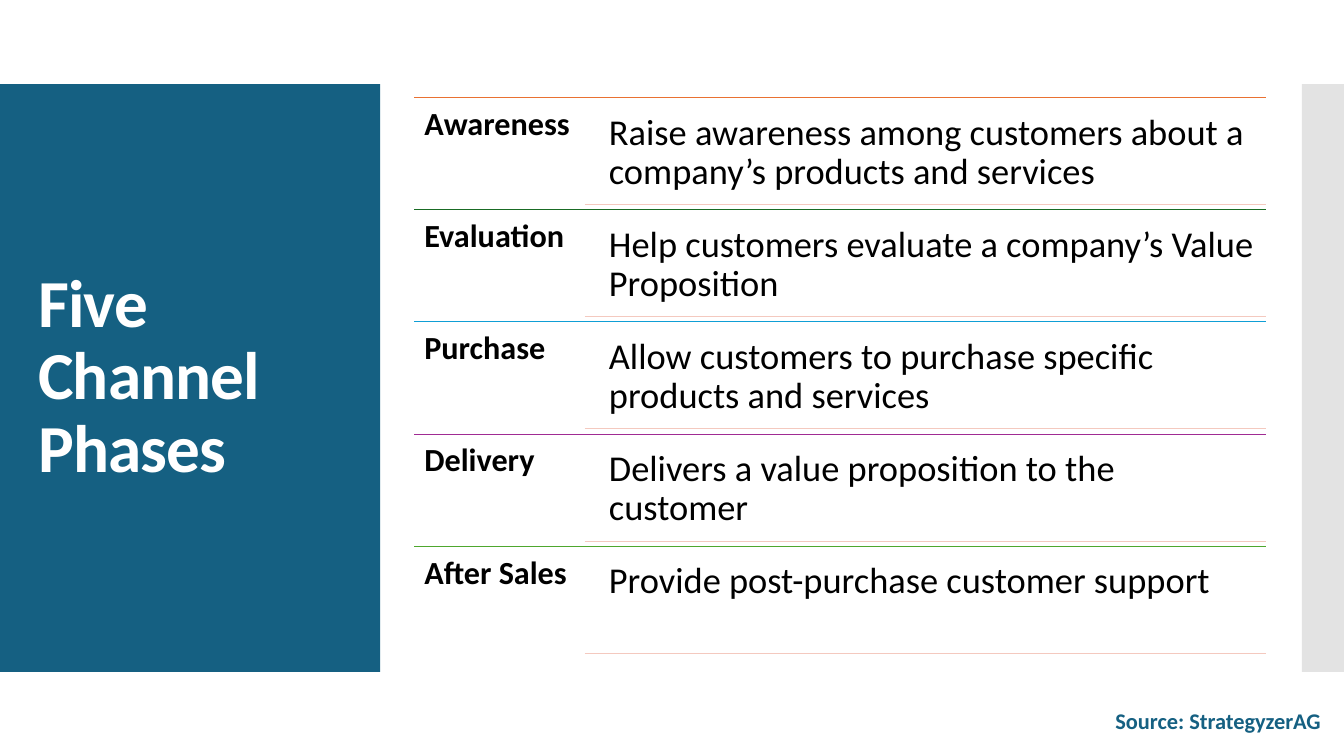
import dataclasses
import pptx
import pptx.dml.color
import pptx.enum.shapes
import pptx.enum.text
import pptx.oxml
import pptx.oxml.ns
import pptx.util

ANCHOR = pptx.enum.text.MSO_ANCHOR
ALIGN = pptx.enum.text.PP_ALIGN
SLIDE_WIDTH, SLIDE_HEIGHT = 13.33, 7.5


@dataclasses.dataclass(frozen=True)
class Theme:
    """Colours, font and type sizes of the slide."""
    font: str = "Calibri"
    panel: str = "156082"
    strip: str = "C8C8C8"
    title: str = "FFFFFF"
    text: str = "000000"
    underline: str = "F4C9BF"
    accents: tuple = ("E97132", "196B24", "0F9ED5", "A02B93", "4EA72E")
    title_size: int = 48
    label_size: int = 23
    detail_size: int = 26
    source_size: int = 16
    line_width: float = 0.75


@dataclasses.dataclass(frozen=True)
class Box:
    """A rectangle in inches."""
    left: float
    top: float
    width: float
    height: float

    def lengths(self):
        """Return left, top, width and height as slide lengths."""
        return [pptx.util.Inches(value) for value in dataclasses.astuple(self)]


THEME = Theme()
PHASES = (
    ("Awareness", "Raise awareness among customers about a company’s products and services"),
    ("Evaluation", "Help customers evaluate a company’s Value Proposition"),
    ("Purchase", "Allow customers to purchase specific products and services"),
    ("Delivery", "Delivers a value proposition to the customer"),
    ("After Sales", "Provide post-purchase customer support"),
)


def rgb(color):
    """Turn a hex string into a colour."""
    return pptx.dml.color.RGBColor.from_string(color)


def add_text(slide, box, text, size, color, bold=False, align=ALIGN.LEFT,
             anchor=ANCHOR.TOP, inset=(0.1, 0.05), tracking=None):
    """Place a wrapped one-paragraph text box with its format."""
    frame = slide.shapes.add_textbox(*box.lengths()).text_frame
    frame.word_wrap = True
    frame.vertical_anchor = anchor
    frame.margin_left = frame.margin_right = pptx.util.Inches(inset[0])
    frame.margin_top = frame.margin_bottom = pptx.util.Inches(inset[1])
    para = frame.paragraphs[0]
    para.alignment = align
    para.line_spacing = 0.9
    span = para.add_run()
    span.text = text
    span.font.name = THEME.font
    span.font.size = pptx.util.Pt(size)
    span.font.bold = bold
    span.font.color.rgb = rgb(color)
    if tracking is not None:
        span._r.get_or_add_rPr().set("spc", str(round(tracking * 100)))


def add_rectangle(slide, box, color, opacity=100):
    """Place a plain filled rectangle."""
    shape = slide.shapes.add_shape(
        pptx.enum.shapes.MSO_SHAPE.RECTANGLE, *box.lengths())
    shape.shadow.inherit = False
    shape.line.fill.background()
    shape.fill.solid()
    shape.fill.fore_color.rgb = rgb(color)
    if opacity < 100:
        fill_color = shape._element.spPr.find(".//" + pptx.oxml.ns.qn("a:srgbClr"))
        alpha = pptx.oxml.parse_xml(
            f'<a:alpha {pptx.oxml.ns.nsdecls("a")} val="{opacity * 1000}"/>')
        fill_color.append(alpha)


def add_rule(slide, left, right, top, color, shadow=False):
    """Draw a horizontal line, with a soft drop shadow if asked."""
    start, end, level = (pptx.util.Inches(value) for value in (left, right, top))
    rule = slide.shapes.add_connector(
        pptx.enum.shapes.MSO_CONNECTOR.STRAIGHT, start, level, end, level)
    rule.line.color.rgb = rgb(color)
    rule.line.width = pptx.util.Pt(THEME.line_width)
    effect = (
        f'<a:outerShdw blurRad="{pptx.util.Pt(3.5)}" dist="{pptx.util.Pt(1.1)}" '
        'dir="5400000" rotWithShape="0"><a:srgbClr val="000000">'
        '<a:alpha val="45000"/></a:srgbClr></a:outerShdw>') if shadow else ""
    rule._element.spPr.append(pptx.oxml.parse_xml(
        f'<a:effectLst {pptx.oxml.ns.nsdecls("a")}>{effect}</a:effectLst>'))


def title_panel(slide, box, title):
    """Fill the panel and centre the title vertically in it."""
    add_rectangle(slide, box, THEME.panel)
    title_box = Box(box.left + 0.28, box.top + 0.4, box.width - 0.55, box.height - 0.8)
    add_text(slide, title_box, title, THEME.title_size, THEME.title,
             bold=True, anchor=ANCHOR.MIDDLE, tracking=-0.6)


def phase_row(slide, box, label, detail, accent):
    """Lay out one phase: top rule, label, detail and underline."""
    right = box.left + box.width
    label_width = box.width / 5
    detail_left = box.left + label_width + 0.13
    pad = box.height / 22
    add_rule(slide, box.left, right, box.top, accent, shadow=True)
    add_text(slide, Box(box.left, box.top, label_width, box.height), label,
             THEME.label_size, THEME.text, bold=True, inset=(0.1, 0.1))
    detail_box = Box(detail_left, box.top + pad, right - detail_left, box.height - 2 * pad)
    add_text(slide, detail_box, detail, THEME.detail_size, THEME.text, inset=(0.11, 0.11))
    add_rule(slide, box.left + label_width, right, box.top + box.height - pad,
             THEME.underline)


def phase_list(slide, box, phases):
    """Stack the phases in equal rows."""
    row_height = box.height / len(phases)
    for index, ((label, detail), accent) in enumerate(zip(phases, THEME.accents)):
        row = Box(box.left, box.top + index * row_height, box.width, row_height)
        phase_row(slide, row, label, detail, accent)


def source_line(slide, box, source):
    """Set the source at the right of its box."""
    add_text(slide, box, source, THEME.source_size, THEME.panel,
             bold=True, align=ALIGN.RIGHT)


def main():
    """Build the slide and save it."""
    deck = pptx.Presentation()
    deck.slide_width = pptx.util.Inches(SLIDE_WIDTH)
    deck.slide_height = pptx.util.Inches(SLIDE_HEIGHT)
    page = deck.slides.add_slide(deck.slide_layouts[6])
    band_top, band_height = SLIDE_HEIGHT / 9, SLIDE_HEIGHT * 7 / 9
    strip_width = SLIDE_WIDTH / 32
    title_panel(page, Box(0, band_top, 3.77, band_height), "Five Channel Phases")
    add_rectangle(page, Box(SLIDE_WIDTH - strip_width, band_top, strip_width, band_height),
                  THEME.strip, opacity=50)
    phase_list(page, Box(4.11, 0.97, 8.45, 5.56), PHASES)
    source_line(page, Box(2.07, 7, 11.13, 0.42), "Source: StrategyzerAG")
    deck.save("out.pptx")


if __name__ == "__main__":
    main()
